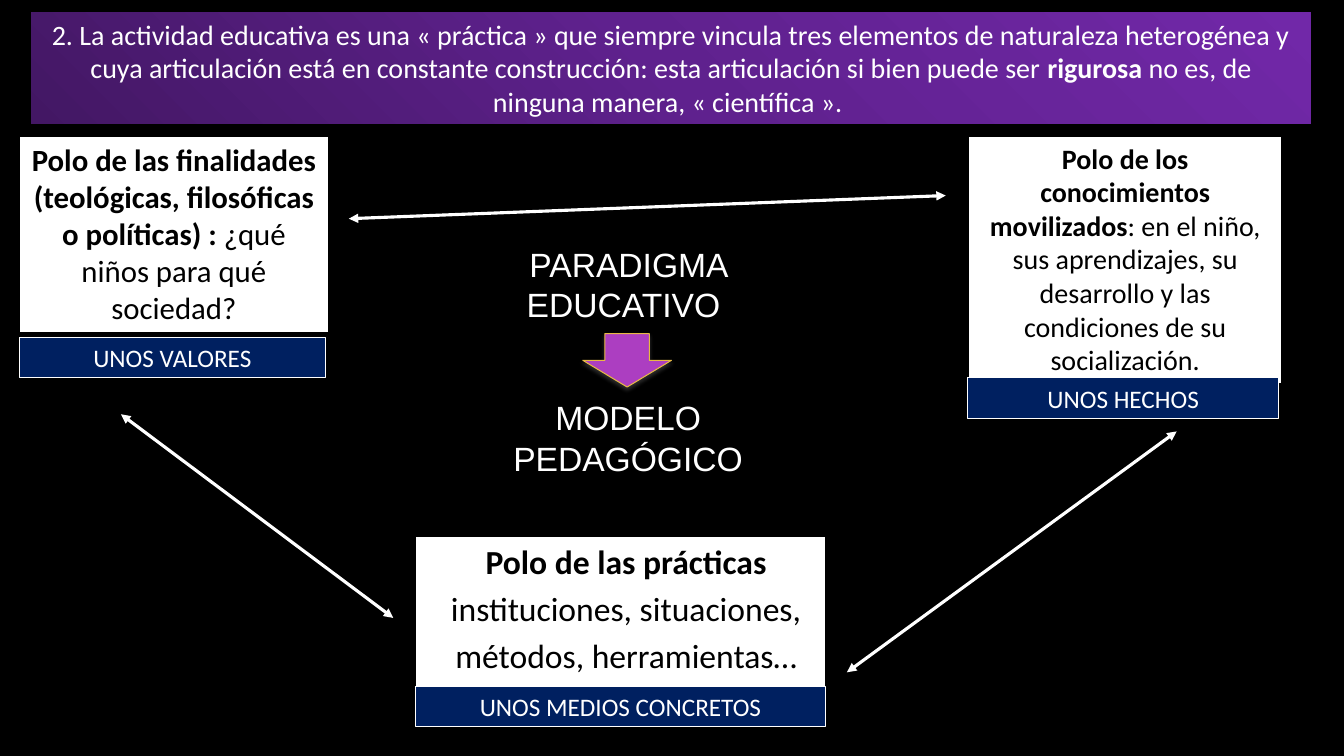
from copy import deepcopy

from lxml.etree import SubElement
from pptx import Presentation
from pptx.dml.color import RGBColor
from pptx.enum.shapes import MSO_CONNECTOR, MSO_SHAPE
from pptx.enum.text import MSO_ANCHOR, MSO_AUTO_SIZE, PP_ALIGN
from pptx.oxml.ns import qn
from pptx.util import Inches, Pt

# Content: each paragraph is a list of (text, bold) runs
TITLE = [[
    ("2. La actividad educativa es una « práctica » que siempre vincula tres elementos de "
     "naturaleza heterogénea y cuya articulación está en constante construcción: esta "
     "articulación si bien puede ser ", False),
    ("rigurosa", True),
    (" no es, de ninguna manera, « científica ». ", False),
]]
CENTRE = [[("PARADIGMA EDUCATIVO ", False)], [("MODELO PEDAGÓGICO", False)]]
POLES = [
    {"box": (4.12, 5.32, 4.07, 1.5), "size": 24, "gap": 4.8, "indent": (0.5, -0.39),
     "text": [[("Polo de las prácticas", True)],
              [("instituciones, situaciones,", False)],
              [("métodos, herramientas…", False)]],
     "label": "UNOS MEDIOS CONCRETOS", "label_box": (4.12, 6.81, 4.07, 0.4)},
    {"box": (0.19, 1.35, 3.07, 1.95), "size": 22,
     "text": [[("Polo de las finalidades (teológicas, filosóficas o políticas) : ", True),
               ("¿qué niños para qué sociedad?", False)]],
     "label": "UNOS VALORES", "label_box": (0.19, 3.35, 3.04, 0.4)},
    {"box": (9.6, 1.35, 3.12, 2.46), "size": 20,
     "text": [[("Polo de los conocimientos movilizados", True),
               (": en el niño, sus aprendizajes, su desarrollo y las condiciones de su "
                "socialización.", False)]],
     "label": "UNOS HECHOS", "label_box": (9.6, 3.75, 3.08, 0.4)},
]
LINKS = [(1.2, 4.11, 3.9, 6.13), (3.46, 2.17, 9.38, 1.94), (11.67, 4.28, 8.4, 6.67)]
GRADIENT = ["431764", "5F218E", "7128A8"]


def color(value):
    return RGBColor.from_string(value)


def inches(values):
    return [Inches(value) for value in values]


def write(shape, paragraphs, size, text_color, font="Calibri", gap=0, indent=None):
    frame = shape.text_frame
    frame_format = {"word_wrap": True, "auto_size": MSO_AUTO_SIZE.NONE,
                    "vertical_anchor": MSO_ANCHOR.TOP}
    for name, value in frame_format.items():
        setattr(frame, name, value)
    for index, runs in enumerate(paragraphs):
        paragraph = frame.paragraphs[0] if index == 0 else frame.add_paragraph()
        paragraph.alignment = PP_ALIGN.CENTER
        if index and gap:
            paragraph.space_before = Pt(gap)
        if indent:
            properties = paragraph._p.get_or_add_pPr()
            for name, value in zip(("marL", "indent"), indent):
                properties.set(name, str(Inches(value)))
        for text, bold in runs:
            run = paragraph.add_run()
            run.text = text
            for name, value in {"name": font, "size": Pt(size), "bold": bold}.items():
                setattr(run.font, name, value)
            run.font.color.rgb = color(text_color)


def add_block(kind, box, fill, line, line_width):
    shape = slide.shapes.add_shape(kind, *inches(box))
    shape.shadow.inherit = False
    shape.fill.solid()
    shape.fill.fore_color.rgb = color(fill)
    shape.line.color.rgb = color(line)
    shape.line.width = Pt(line_width)
    return shape


presentation = Presentation()
presentation.slide_width, presentation.slide_height = inches((13.33, 7.5))
slide = presentation.slides.add_slide(presentation.slide_layouts[5])
slide.background.fill.solid()
slide.background.fill.fore_color.rgb = color("000000")

# Title banner with a three-stop gradient
title = slide.shapes.title
title.left, title.top, title.width, title.height = inches((0.31, 0.12, 12.69, 1.11))
title.fill.gradient()
title.fill.gradient_angle = 45
stop_list = title._element.spPr.find(qn("a:gradFill")).find(qn("a:gsLst"))
stop_list.insert(1, deepcopy(stop_list[0]))
for index, (stop, value) in enumerate(zip(title.fill.gradient_stops, GRADIENT)):
    stop.position = index / (len(GRADIENT) - 1)
    stop.color.rgb = color(value)
write(title, TITLE, 20, "FFFFFF")

# Double-headed links between the poles
for link in LINKS:
    connector = slide.shapes.add_connector(MSO_CONNECTOR.STRAIGHT, *inches(link))
    connector.line.color.rgb = color("FFFFFF")
    connector.line.width = Pt(2.25)
    for end in ("a:headEnd", "a:tailEnd"):
        SubElement(connector.line._get_or_add_ln(), qn(end), type="triangle")
    SubElement(connector._element.spPr, qn("a:effectLst"))

# Centre: from paradigm to model
centre = slide.shapes.add_textbox(*inches((4.67, 2.37, 3.12, 2.52)))
write(centre, CENTRE, 24, "FFFFFF", font="Arial", gap=52)
arrow = add_block(MSO_SHAPE.DOWN_ARROW, (5.78, 3.31, 0.88, 0.53), "AC3EC1", "E7B944", 0.75)
effects = arrow._element.spPr.find(qn("a:effectLst"))
shadow = SubElement(effects, qn("a:outerShdw"), blurRad=str(Pt(3.1)), dist=str(Pt(1.8)),
                    dir="5400000", rotWithShape="0")
shadow_color = SubElement(shadow, qn("a:srgbClr"), val="808080")
SubElement(shadow_color, qn("a:alpha"), val="35000")

# Poles with their labels
for pole in POLES:
    panel = add_block(MSO_SHAPE.RECTANGLE, pole["box"], "FFFFFF", "000000", 1.5)
    write(panel, pole["text"], pole["size"], "000000",
          gap=pole.get("gap", 0), indent=pole.get("indent"))
    label = add_block(MSO_SHAPE.RECTANGLE, pole["label_box"], "002060", "FFFFFF", 0.75)
    write(label, [[(pole["label"], False)]], 18, "FFFFFF")

presentation.save("out.pptx")
